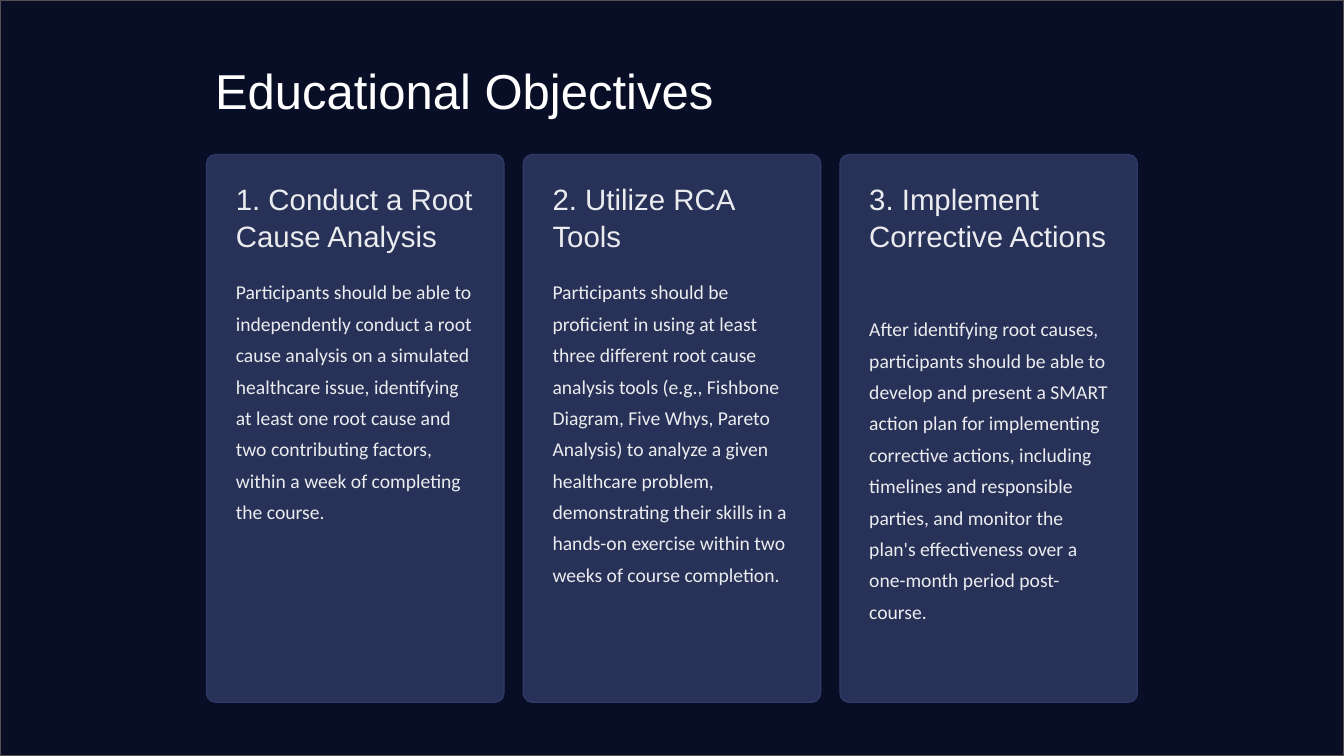
from pptx import Presentation
from pptx.dml.color import RGBColor as Rgb
from pptx.enum.shapes import MSO_SHAPE as Kind
from pptx.enum.text import MSO_ANCHOR as Anchor, MSO_AUTO_SIZE as Fit, PP_ALIGN as Align
from pptx.util import Inches, Pt

HUES = {"night": "080E26", "edge": "565151", "card": "283157",
        "rim": "303B69", "white": "FFFFFF", "pale": "EBECEF"}

GOALS = [
    ("1. Conduct a Root Cause Analysis", 2,
     "Participants should be able to independently conduct a root cause analysis on a "
     "simulated healthcare issue, identifying at least one root cause and two contributing "
     "factors, within a week of completing the course.", 10),
    ("2. Utilize RCA Tools", 2,
     "Participants should be proficient in using at least three different root cause analysis "
     "tools (e.g., Fishbone Diagram, Five Whys, Pareto Analysis) to analyze a given healthcare "
     "problem, demonstrating their skills in a hands-on exercise within two weeks of course "
     "completion.", 12),
    ("3. Implement Corrective Actions", 3,
     "After identifying root causes, participants should be able to develop and present a SMART "
     "action plan for implementing corrective actions, including timelines and responsible "
     "parties, and monitor the plan's effectiveness over a one-month period post-course.", 12),
]


class Deck:
    wide, high = 16, 9
    left, top = 2.46, 1.84
    step, width, height = 3.77, 3.54, 6.52
    pad, gap = 0.25, 0.23
    head = ("Arial", 25.2, 31.5, "pale")
    body = ("Calibri", 16.8, 26.9, "pale")
    main = ("Arial", 42, 52.5, "white")

    def __init__(self):
        self.prs = Presentation()
        self.prs.slide_width = Inches(self.wide)
        self.prs.slide_height = Inches(self.high)
        self.slide = self.prs.slides.add_slide(self.prs.slide_layouts[5])
        self.shapes = self.slide.shapes

    def panel(self, kind, box, fill, line):
        shape = self.shapes.add_shape(kind, *map(Inches, box))
        shape.shadow.inherit = False
        shape.fill.solid()
        shape.fill.fore_color.rgb = Rgb.from_string(HUES[fill])
        shape.line.color.rgb = Rgb.from_string(HUES[line])
        shape.line.width = Pt(1.04)
        return shape

    def label(self, shape, text, style, wrap=True):
        face, size, lead, hue = style
        frame = shape.text_frame
        frame.text = text
        frame.word_wrap = wrap
        frame.auto_size = Fit.NONE
        frame.vertical_anchor = Anchor.TOP
        para = frame.paragraphs[0]
        para.alignment = Align.LEFT
        para.line_spacing = Pt(lead)
        para.font.name = face
        para.font.size = Pt(size)
        para.font.color.rgb = Rgb.from_string(HUES[hue])

    def title(self, text):
        shape = self.shapes.title
        shape.left, shape.top = Inches(self.left), Inches(0.64)
        shape.width, shape.height = Inches(6.38), Inches(0.73)
        self.label(shape, text, self.main, wrap=False)
        tree = shape.element.getparent()
        tree.append(shape.element)

    def block(self, x, y, rows, text, style):
        high = rows * style[2] / 72
        box = (x, y, self.width - 2 * self.pad, high)
        self.label(self.shapes.add_textbox(*map(Inches, box)), text, style)
        return y + high

    def card(self, col, name, lines, text, rows):
        x = self.left + col * self.step
        box = (x, self.top, self.width, self.height)
        shape = self.panel(Kind.ROUNDED_RECTANGLE, box, "card", "rim")
        shape.adjustments[0] = 0.03
        x += self.pad
        end = self.block(x, self.top + self.pad, lines, name, self.head)
        self.block(x, end + self.gap, rows, text, self.body)


def main():
    deck = Deck()
    deck.panel(Kind.RECTANGLE, (0, 0, deck.wide, deck.high), "night", "edge")
    deck.title("Educational Objectives")
    for col, goal in enumerate(GOALS):
        deck.card(col, *goal)
    deck.prs.save("out.pptx")


if __name__ == "__main__":
    main()
